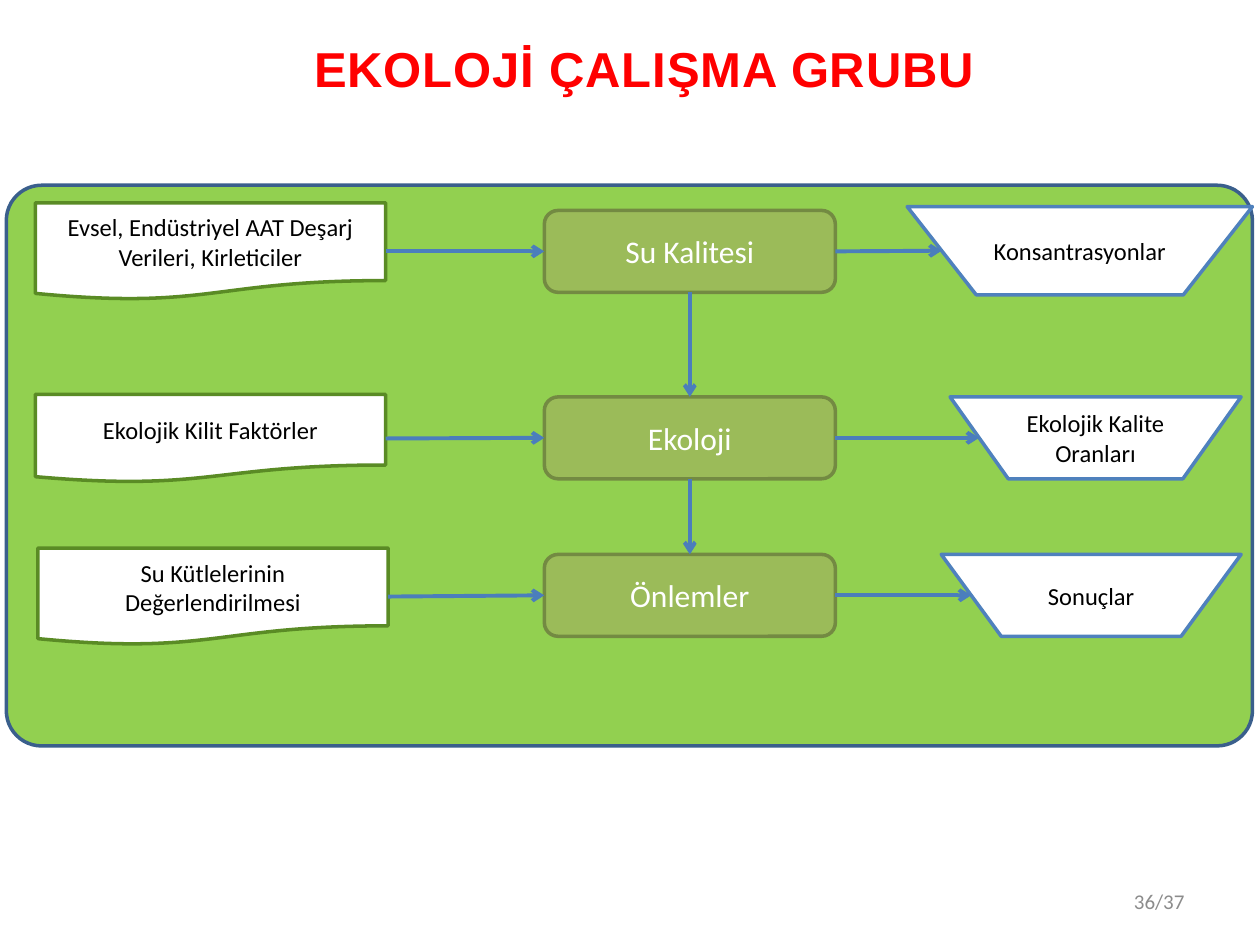
from typing import NamedTuple

from lxml import etree
from pptx import Presentation
from pptx.dml.color import RGBColor
from pptx.enum.shapes import MSO_CONNECTOR, MSO_SHAPE
from pptx.enum.text import MSO_ANCHOR, PP_ALIGN
from pptx.oxml.ns import qn
from pptx.util import Inches, Pt

ROUND = MSO_SHAPE.ROUNDED_RECTANGLE
PAPER = MSO_SHAPE.FLOWCHART_DOCUMENT
FUNNEL = MSO_SHAPE.FLOWCHART_MANUAL_OPERATION
STRAIGHT = MSO_CONNECTOR.STRAIGHT
TOP, MIDDLE = MSO_ANCHOR.TOP, MSO_ANCHOR.MIDDLE
CENTER, RIGHT = PP_ALIGN.CENTER, PP_ALIGN.RIGHT
ABOVE, LEFT_SIDE, BELOW, RIGHT_SIDE = range(4)


class Box(NamedTuple):
    left: float
    top: float
    width: float
    height: float


class Style(NamedTuple):
    kind: int
    fill: str
    line: str
    size: int
    ink: str


class Row(NamedTuple):
    source: str
    source_box: Box
    step: str
    step_top: float
    result: str
    result_box: Box


PANEL = Style(ROUND, "92D050", "3A5F8C", 18, "FFFFFF")
STEP = Style(ROUND, "9BBB59", "738A42", 18, "FFFFFF")
SOURCE = Style(PAPER, "FFFFFF", "5A8B25", 14, "000000")
RESULT = Style(FUNNEL, "FFFFFF", "4F81BD", 14, "000000")

ROWS = [
    Row("Evsel, Endüstriyel AAT Deşarj Verileri, Kirleticiler",
        Box(0.28, 1.61, 2.78, 0.77), "Su Kalitesi", 1.67,
        "Konsantrasyonlar", Box(7.2, 1.64, 2.74, 0.7)),
    Row("Ekolojik Kilit Faktörler",
        Box(0.28, 3.13, 2.78, 0.7), "Ekoloji", 3.15,
        "Ekolojik Kalite Oranları", Box(7.54, 3.15, 2.31, 0.65)),
    Row("Su Kütlelerinin Değerlendirilmesi",
        Box(0.3, 4.35, 2.78, 0.77), "Önlemler", 4.4,
        "Sonuçlar", Box(7.47, 4.4, 2.38, 0.65)),
]


def color(code: str) -> RGBColor:
    return RGBColor.from_string(code)


def write(shape, text: str, size: int, ink: str, font: str = "Calibri",
          align=CENTER, anchor=MIDDLE):
    frame = shape.text_frame
    frame.text = text
    frame.word_wrap = True
    frame.vertical_anchor = anchor
    para = frame.paragraphs[0]
    para.alignment = align
    run = para.runs[0]
    run.font.name = font
    run.font.size = Pt(size)
    run.font.color.rgb = color(ink)
    return run


def draw(slide, box: Box, style: Style, text: str = ""):
    shape = slide.shapes.add_shape(style.kind, *map(Inches, box))
    shape.shadow.inherit = False
    shape.fill.solid()
    shape.fill.fore_color.rgb = color(style.fill)
    shape.line.color.rgb = color(style.line)
    shape.line.width = Pt(2)
    if text:
        write(shape, text, style.size, style.ink)
    return shape


def arrow(slide, start, side: int, end_x: int = 0, end_y: int = 0):
    link = slide.shapes.add_connector(STRAIGHT, 0, 0, end_x, end_y)
    link.begin_connect(start, side)
    link.line.color.rgb = color("4B7EBC")
    link.line.width = Pt(2.25)
    etree.SubElement(link.line._get_or_add_ln(), qn("a:tailEnd"), type="arrow")
    etree.SubElement(link._element.spPr, qn("a:effectLst"))
    return link


def label(slide, box: Box):
    return slide.shapes.add_textbox(*map(Inches, box))


def main() -> None:
    deck = Presentation()
    deck.slide_width, deck.slide_height = Inches(10), Inches(7.5)
    slide = deck.slides.add_slide(deck.slide_layouts[6])

    panel = draw(slide, Box(0.05, 1.47, 9.89, 4.45), PANEL)
    panel.adjustments[0] = 0.063

    above = None
    for row in ROWS:
        step = draw(slide, Box(4.32, row.step_top, 2.31, 0.65), STEP, row.step)
        source = draw(slide, row.source_box, SOURCE, row.source)
        result = draw(slide, row.result_box, RESULT, row.result)
        arrow(slide, source, RIGHT_SIDE).end_connect(step, LEFT_SIDE)
        arrow(slide, step, RIGHT_SIDE,
              result.left + result.width // 10,
              result.top + result.height // 2)
        if above is not None:
            arrow(slide, above, BELOW).end_connect(step, ABOVE)
        above = step

    title = write(label(slide, Box(0.35, 0.26, 9.53, 0.57)),
                  "EKOLOJİ ÇALIŞMA GRUBU", 28, "FF0000", "Arial", anchor=TOP)
    title.font.bold = True
    title.font._element.set("spc", "50")
    write(label(slide, Box(7.17, 6.95, 2.33, 0.4)), "36/37", 12, "8C8C8C",
          align=RIGHT)

    deck.save("out.pptx")


if __name__ == "__main__":
    main()
